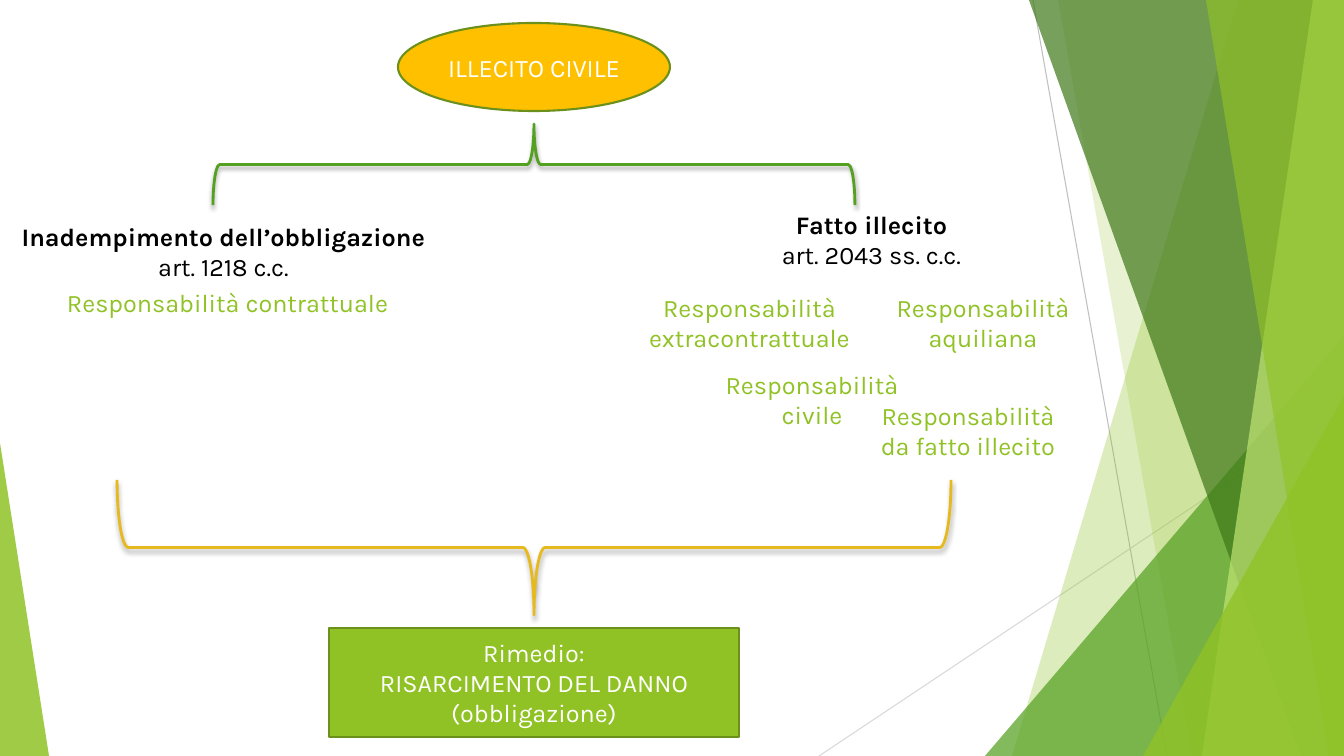
"""Build a slide that maps civil wrongs to their common remedy."""
from lxml import etree
from pptx import Presentation
from pptx.dml.color import RGBColor
from pptx.enum.shapes import MSO_CONNECTOR, MSO_SHAPE
from pptx.enum.text import MSO_ANCHOR, MSO_AUTO_SIZE, PP_ALIGN
from pptx.oxml import parse_xml
from pptx.oxml.ns import qn
from pptx.util import Pt

EMU_PER_PX = 914400 / 100.8
WIDTH, HEIGHT = 1344, 756
FONT, TEXT_SIZE = "Karla", 18
LEFT, CENTER = PP_ALIGN.LEFT, PP_ALIGN.CENTER
MIDDLE = MSO_ANCHOR.MIDDLE
FIT_TEXT = MSO_AUTO_SIZE.SHAPE_TO_FIT_TEXT
STRAIGHT = MSO_CONNECTOR.STRAIGHT
ELLIPSE, RECTANGLE = MSO_SHAPE.OVAL, MSO_SHAPE.RECTANGLE
TRIANGLE, BRACE = MSO_SHAPE.ISOSCELES_TRIANGLE, MSO_SHAPE.RIGHT_BRACE
GREEN, DARK_GREEN, EDGE_GREEN = "90C226", "54A021", "6B901C"
BLACK, WHITE, AMBER, GOLD = "000000", "FFFFFF", "FFC000", "E6B91E"
DRAWING = "http://schemas.openxmlformats.org/drawingml/2006/main"

# Lines: start, end, colour
LINES = [
    ((1033, 0), (1167, HEIGHT), "BFBFBF"),
    ((WIDTH, 406), (819, HEIGHT), "D9D9D9"),
]
# Slabs: top x, bottom x. Wedges: left, top, right, apex position
FACETS = [
    ("slab", (1238, 1012), GREEN, 30),
    ("slab", (1058, 1192), GREEN, 20),
    ("wedge", (985, 336, WIDTH, 1), DARK_GREEN, 72),
    ("slab", (1029, 1301), "3F7819", 70),
    ("slab", (1313, 1202), "C0E474", 70),
    ("slab", (1206, 1329), GREEN, 65),
    ("wedge", (1143, 396, WIDTH, 1), GREEN, 80),
    ("wedge", (0, 443, 49, 0), GREEN, 85),
]
# Labels: left, top, width, height, alignment, colour, (text, bold) paragraphs
LABELS = [
    (0, 216, 447, 72, CENTER, BLACK,
     [("Inadempimento dell’obbligazione", True), ("art. 1218 c.c.", False)]),
    (705, 204, 333, 72, CENTER, BLACK,
     [("Fatto illecito", True), ("art. 2043 ss. c.c.", False)]),
    (57, 282, 400, 40, LEFT, GREEN, [("Responsabilità contrattuale", False)]),
    (637, 287, 225, 72, CENTER, GREEN, [("Responsabilità extracontrattuale", False)]),
    (884, 287, 198, 72, CENTER, GREEN, [("Responsabilità aquiliana", False)]),
    (705, 364, 214, 72, CENTER, GREEN, [("Responsabilità civile", False)]),
    (862, 395, 212, 72, CENTER, GREEN, [("Responsabilità da fatto illecito", False)]),
]
# Nodes: preset, left, top, width, height, fill, lines of text
NODES = [
    (ELLIPSE, 398, 23, 272, 88, AMBER, ["ILLECITO CIVILE"]),
    (RECTANGLE, 329, 628, 410, 109, GREEN,
     ["Rimedio:", "RISARCIMENTO DEL DANNO", "(obbligazione)"]),
]
# Braces as seen after turning: left, top, width, height, rotation, colour
BRACES = [
    (117, 480, 834, 135, 90, GOLD),
    (213, 124, 642, 81, 270, DARK_GREEN),
]


def px(*lengths):
    return [round(length * EMU_PER_PX) for length in lengths]


def color(value):
    return RGBColor.from_string(value)


def write(text_frame, paragraphs, alignment, text_color):
    text_frame.word_wrap = True
    for index, (text, bold) in enumerate(paragraphs):
        paragraph = text_frame.add_paragraph() if index else text_frame.paragraphs[0]
        paragraph.text = text
        paragraph.alignment = alignment
        font = paragraph.font
        font.name, font.size, font.bold = FONT, Pt(TEXT_SIZE), bold
        font.color.rgb = color(text_color)


def add_line(shapes, start, end, line_color):
    line = shapes.add_connector(STRAIGHT, *px(*start, *end))
    line.line.color.rgb = color(line_color)
    line.line.width = Pt(0.75)
    etree.SubElement(line._element.spPr, qn("a:effectLst"))


def add_facet(shapes, kind, geometry, fill_color, opacity):
    if kind == "slab":
        top_x, bottom_x = geometry
        builder = shapes.build_freeform(top_x, 0, scale=EMU_PER_PX)
        builder.add_line_segments([(WIDTH, 0), (WIDTH, HEIGHT), (bottom_x, HEIGHT)])
        facet = builder.convert_to_shape()
    else:
        left, top, right, apex = geometry
        facet = shapes.add_shape(TRIANGLE, *px(left, top, right - left, HEIGHT - top))
        facet.adjustments[0] = apex
    facet.shadow.inherit = False
    facet.line.fill.background()
    facet.fill.solid()
    facet.fill.fore_color.rgb = color(fill_color)
    tint = facet._element.spPr.find(".//" + qn("a:srgbClr"))
    etree.SubElement(tint, qn("a:alpha"), val=str(opacity * 1000))


def add_node(shapes, preset, left, top, width, height, fill_color, lines):
    node = shapes.add_shape(preset, *px(left, top, width, height))
    node.shadow.inherit = False
    node.fill.solid()
    node.fill.fore_color.rgb = color(fill_color)
    node.line.color.rgb = color(EDGE_GREEN)
    node.line.width = Pt(1.5)
    node.text_frame.vertical_anchor = MIDDLE
    write(node.text_frame, [(line, False) for line in lines], CENTER, WHITE)


def add_label(shapes, left, top, width, height, alignment, text_color, paragraphs):
    label = shapes.add_textbox(*px(left, top, width, height))
    write(label.text_frame, paragraphs, alignment, text_color)
    label.text_frame.auto_size = FIT_TEXT


def add_brace(shapes, left, top, width, height, rotation, line_color):
    shift = (width - height) / 2
    brace = shapes.add_shape(BRACE, *px(left + shift, top - shift, height, width))
    brace.rotation = rotation
    brace.fill.background()
    brace.line.color.rgb = color(line_color)
    brace.line.width = Pt(2)
    brace._element.spPr.append(parse_xml(
        f'<a:effectLst xmlns:a="{DRAWING}">'
        f'<a:outerShdw blurRad="{Pt(3)}" dist="{Pt(2)}" dir="5400000" rotWithShape="0">'
        f'<a:srgbClr val="{BLACK}"><a:alpha val="35000"/></a:srgbClr>'
        '</a:outerShdw></a:effectLst>'))


def main():
    presentation = Presentation()
    presentation.slide_width, presentation.slide_height = px(WIDTH, HEIGHT)
    slide = presentation.slides.add_slide(presentation.slide_layouts[6])
    for add, items in [(add_line, LINES), (add_facet, FACETS), (add_label, LABELS),
                       (add_brace, BRACES), (add_node, NODES)]:
        for item in items:
            add(slide.shapes, *item)
    presentation.save("out.pptx")


if __name__ == "__main__":
    main()
